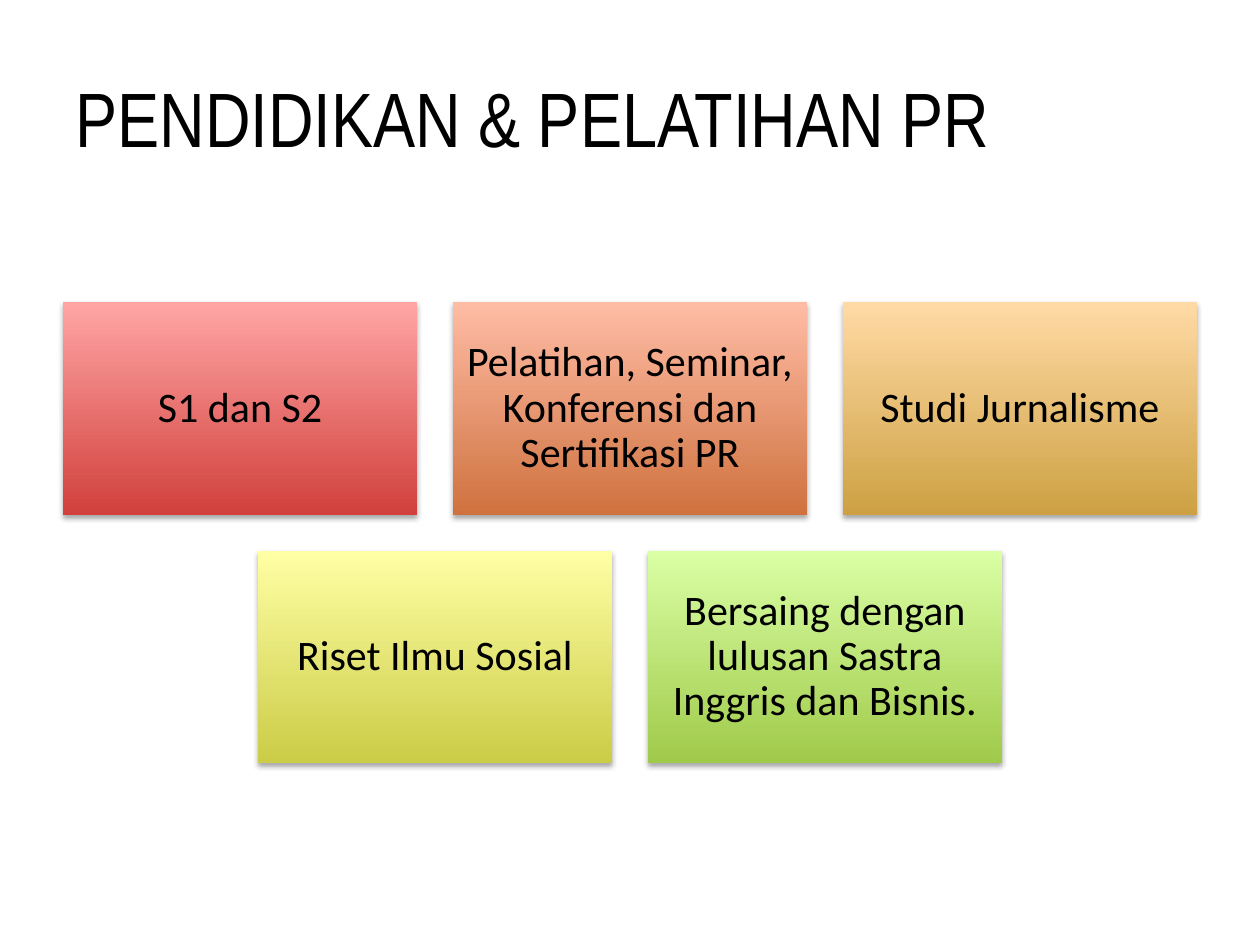
from dataclasses import dataclass

from lxml import etree
from pptx import Presentation
from pptx.dml.color import RGBColor
from pptx.enum.shapes import MSO_SHAPE
from pptx.enum.text import MSO_ANCHOR, PP_ALIGN
from pptx.oxml.ns import qn
from pptx.shapes.autoshape import Shape
from pptx.shapes.shapetree import GroupShapes
from pptx.slide import Slide
from pptx.util import Cm, Pt

RECTANGLE = MSO_SHAPE.RECTANGLE
MIDDLE = MSO_ANCHOR.MIDDLE
CENTER = PP_ALIGN.CENTER

COLORS = {
    "text": "000000",
    "shadow": "000000",
    "red": "D1403C", "light red": "FFA6A5",
    "orange": "CF723F", "light orange": "FFBCA5",
    "gold": "CDA143", "light gold": "FFDAA5",
    "yellow": "CBCC47", "light yellow": "FFFFA5",
    "green": "A0CA4A", "light green": "DAFFA5",
}

# Lengths in centimetres
SLIDE_W, SLIDE_H = 25.4, 19.05
MARGIN = 1.27
CARD_W, CARD_H = 7.14, 4.29
GAP = 0.72
GRID_TOP = 6.09


@dataclass
class Card:
    text: str
    color: str


ROWS = [
    [
        Card("S1 dan S2", "red"),
        Card("Pelatihan, Seminar, Konferensi dan Sertifikasi PR", "orange"),
        Card("Studi Jurnalisme", "gold"),
    ],
    [
        Card("Riset Ilmu Sosial", "yellow"),
        Card("Bersaing dengan lulusan Sastra Inggris dan Bisnis.", "green"),
    ],
]


def rgb(name: str) -> RGBColor:
    return RGBColor.from_string(COLORS[name])


def write_text(shape: Shape, text: str, font: str, size: float) -> None:
    tf = shape.text_frame
    tf.word_wrap = True
    tf.vertical_anchor = MIDDLE
    r = tf.paragraphs[0].add_run()
    r.text = text
    r.font.name = font
    r.font.size = Pt(size)
    r.font.color.rgb = rgb("text")


def add_soft_shadow(shape: Shape) -> None:
    """Replace the theme shadow with a faint one straight below."""
    shape.shadow.inherit = False
    effects = shape._element.spPr.find(qn("a:effectLst"))
    shadow = etree.SubElement(effects, qn("a:outerShdw"), blurRad=str(Pt(3.1)),
                              dist=str(Pt(1.8)), dir="5400000", rotWithShape="0")
    color = etree.SubElement(shadow, qn("a:srgbClr"), val=COLORS["shadow"])
    etree.SubElement(color, qn("a:alpha"), val="35000")


def add_title(s: Slide, text: str) -> None:
    box = s.shapes.add_textbox(Cm(MARGIN), Cm(0.76), Cm(SLIDE_W - 2 * MARGIN), Cm(3.18))
    write_text(box, text, "Arial Narrow", 44)


def add_card(shapes: GroupShapes, card: Card, left: float, top: float) -> None:
    sp = shapes.add_shape(RECTANGLE, Cm(left), Cm(top), Cm(CARD_W), Cm(CARD_H))
    sp.fill.gradient()
    sp.fill.gradient_angle = 90
    bottom, upper = sp.fill.gradient_stops
    bottom.position, upper.position = 0, 1
    bottom.color.rgb = rgb(card.color)
    upper.color.rgb = rgb(f"light {card.color}")
    sp.line.fill.background()
    add_soft_shadow(sp)

    write_text(sp, card.text, "Calibri", 24)
    tf = sp.text_frame
    tf.margin_left = tf.margin_right = tf.margin_top = tf.margin_bottom = Cm(0.25)
    p = tf.paragraphs[0]
    p.alignment = CENTER
    p.line_spacing = 0.9


def add_card_rows(s: Slide, rows: list[list[Card]]) -> None:
    """Stack the rows of cards, each row centred on the slide."""
    shapes = s.shapes.add_group_shape().shapes
    for i, row in enumerate(rows):
        top = GRID_TOP + i * (CARD_H + GAP)
        row_w = len(row) * (CARD_W + GAP) - GAP
        for j, card in enumerate(row):
            left = (SLIDE_W - row_w) / 2 + j * (CARD_W + GAP)
            add_card(shapes, card, left, top)


def main() -> None:
    prs = Presentation()
    prs.slide_width, prs.slide_height = Cm(SLIDE_W), Cm(SLIDE_H)
    s = prs.slides.add_slide(prs.slide_layouts[6])
    add_title(s, "PENDIDIKAN & PELATIHAN PR")
    add_card_rows(s, ROWS)
    prs.save("out.pptx")


if __name__ == "__main__":
    main()
